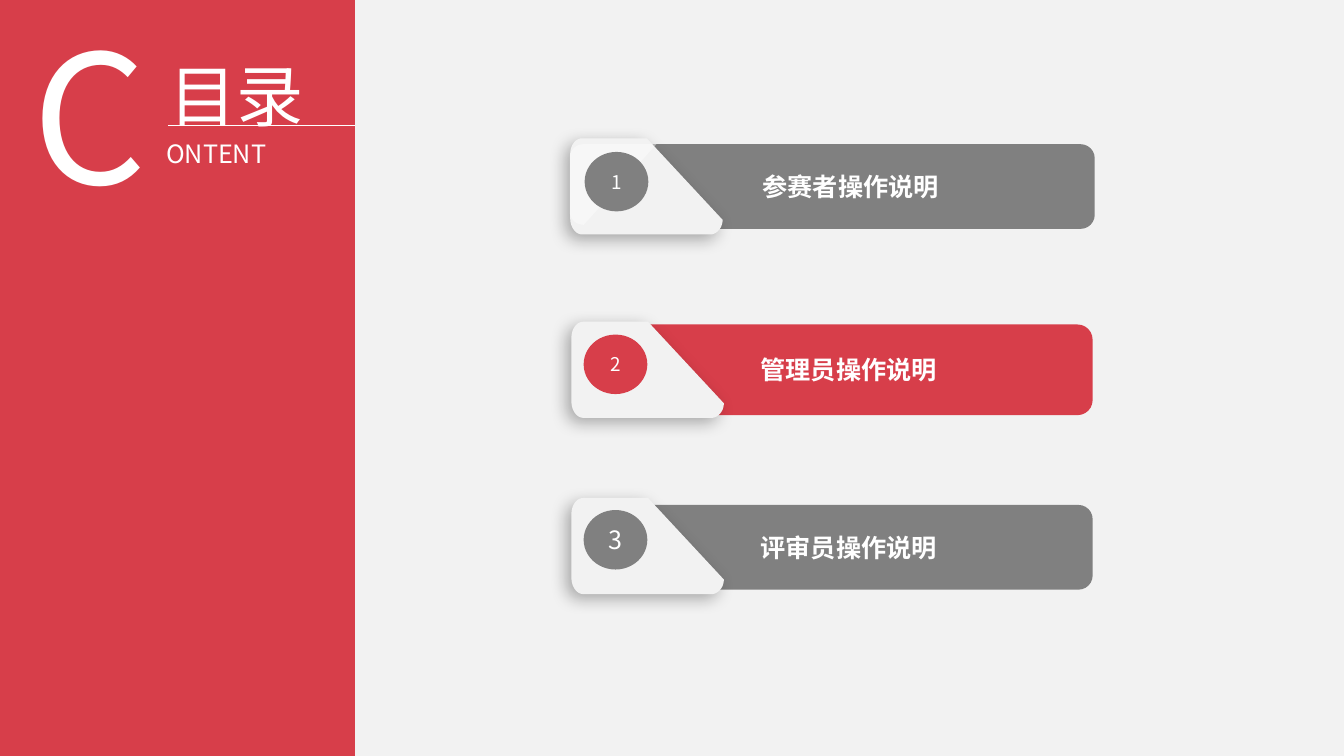
from lxml import etree
from pptx import Presentation, util as u
from pptx.dml.color import RGBColor
from pptx.enum import shapes, text
from pptx.oxml import parse_xml
from pptx.oxml.ns import nsdecls, qn

FONT = "Noto Sans CJK SC"
RED, GRAY, LIGHT, WHITE = "D73E4A", "808080", "F2F2F2", "FFFFFF"


def style(shape, fill=None, words=None, size=18, bold=False,
          align=text.PP_ALIGN.CENTER, anchor=text.MSO_ANCHOR.MIDDLE):
    """Give a shape a plain fill without outline or shadow, and set its words."""
    if fill:
        shape.fill.solid()
        shape.fill.fore_color.rgb = RGBColor.from_string(fill)
        shape.line.fill.background()
        shape.shadow.inherit = False
    if words:
        frame = shape.text_frame
        frame.text = words
        frame.word_wrap = True
        frame.vertical_anchor = anchor
        if not fill:
            frame.auto_size = text.MSO_AUTO_SIZE.SHAPE_TO_FIT_TEXT
        frame.paragraphs[0].alignment = align
        font = frame.paragraphs[0].runs[0].font
        font.name, font.size, font.bold = FONT, u.Pt(size), bold
        font.color.rgb = RGBColor.from_string(WHITE)
        etree.SubElement(font._element, qn("a:ea"), typeface=FONT)


def add_outline(left, top, steps, fill):
    """Draw a closed outline; a step holds a corner, or the three points of a Bezier curve."""
    corners = [steps[0]]
    for step in steps[1:]:
        if len(step) == 2:
            corners.append(step)
            continue
        x0, y0 = corners[-1]
        x1, y1, x2, y2, x3, y3 = step
        for t in [i / 10 for i in range(1, 11)]:
            a, b, c, d = (1 - t) ** 3, 3 * t * (1 - t) ** 2, 3 * t * t * (1 - t), t ** 3
            corners.append((a * x0 + b * x1 + c * x2 + d * x3,
                            a * y0 + b * y1 + c * y2 + d * y3))
    points = [(u.Pt(left + x), u.Pt(top + y)) for x, y in corners]
    builder = slide.shapes.build_freeform(*points[0])
    builder.add_line_segments(points[1:], close=True)
    outline = builder.convert_to_shape()
    style(outline, fill)
    return outline


deck = Presentation()
deck.slide_width, deck.slide_height = u.Pt(960), u.Pt(540)
slide = deck.slides.add_slide(deck.slide_layouts[5])
slide.background.fill.solid()
slide.background.fill.fore_color.rgb = RGBColor.from_string(LIGHT)

# Red side panel with the heading
panel = slide.shapes.add_shape(shapes.MSO_SHAPE.RECTANGLE, 0, 0, u.Pt(253.5), u.Pt(540))
style(panel, RED)

heading = slide.shapes.title
heading.left, heading.top = u.Pt(51), u.Pt(6.5)
heading.width, heading.height = u.Pt(235.5), u.Pt(84)
style(heading, words="目录", size=48, anchor=text.MSO_ANCHOR.TOP)
heading.text_frame.paragraphs[0].line_spacing = 1.5
heading.element.addprevious(panel.element)

for letters, size, left, top, width, height in [
    ("ONTENT", 18, 111.6, 95, 135.4, 29),
    ("C", 128, 15.8, 0, 85.7, 162.7),
]:
    box = slide.shapes.add_textbox(u.Pt(left), u.Pt(top), u.Pt(width), u.Pt(height))
    style(box, words=letters, size=size, align=text.PP_ALIGN.JUSTIFY,
          anchor=text.MSO_ANCHOR.TOP)

rule = slide.shapes.add_connector(shapes.MSO_CONNECTOR.STRAIGHT,
                                  u.Pt(120), u.Pt(89.5), u.Pt(253.5), u.Pt(89.5))
rule.line.color.rgb = RGBColor.from_string(WHITE)
rule.line.width = u.Pt(0.75)
etree.SubElement(rule.element.spPr, qn("a:effectLst"))

# Numbered entries: bar, cut card and badge
CARD = [(8.6, 0), (54.7, 0), (108.9, 58.3), (108.9, 64, 104.6, 68.7, 100.2, 68.7),
        (8.6, 68.7), (3.8, 68.7, 0, 63.5, 0, 57), (0, 11.5), (0, 5, 3.8, 0, 8.6, 0)]
GLARE = [(10, 0), (61.9, 0), (10, 57.6), (4.3, 57.6, 0, 53.3, 0, 48.2),
         (0, 10), (0, 4.3, 4.3, 0, 10, 0)]
SHADOW = (f'<a:outerShdw {nsdecls("a")} blurRad="{u.Pt(12)}" dist="{u.Pt(5)}" dir="8100000" '
          'algn="tr" rotWithShape="0"><a:srgbClr val="000000"><a:alpha val="30000"/>'
          '</a:srgbClr></a:outerShdw>')

entries = [
    # words, colour, number size, bar (left, top, height), card (left, top), badge (left, top)
    ("参赛者操作说明", GRAY, 13.5, (433.5, 103, 60.5), (407.3, 98.8), (417.6, 108.5)),
    ("管理员操作说明", RED, 13.5, (432, 231.8, 64.8), (408.2, 229.8), (416.9, 239)),
    ("评审员操作说明", GRAY, 18, (432, 360.7, 60.5), (408.2, 355.7), (416.9, 364.3)),
]
for number, (words, colour, size, bar_at, card_at, badge_at) in enumerate(entries, 1):
    left, top, height = bar_at
    bar = slide.shapes.add_shape(shapes.MSO_SHAPE.ROUNDED_RECTANGLE,
                                 u.Pt(left), u.Pt(top), u.Pt(348.5), u.Pt(height))
    style(bar, colour, words, bold=True)

    card = add_outline(*card_at, CARD, LIGHT)
    card.element.spPr.find(qn("a:effectLst")).append(parse_xml(SHADOW))

    if number == 1:
        glare = add_outline(407, 103, GLARE, WHITE)
        glare_colour = glare.element.spPr.find(qn("a:solidFill"))[0]
        etree.SubElement(glare_colour, qn("a:alpha"), val="41000")

    badge = slide.shapes.add_shape(shapes.MSO_SHAPE.OVAL, *map(u.Pt, badge_at),
                                   u.Pt(45.5), u.Pt(42.5))
    style(badge, colour, str(number), size)

deck.save("out.pptx")
